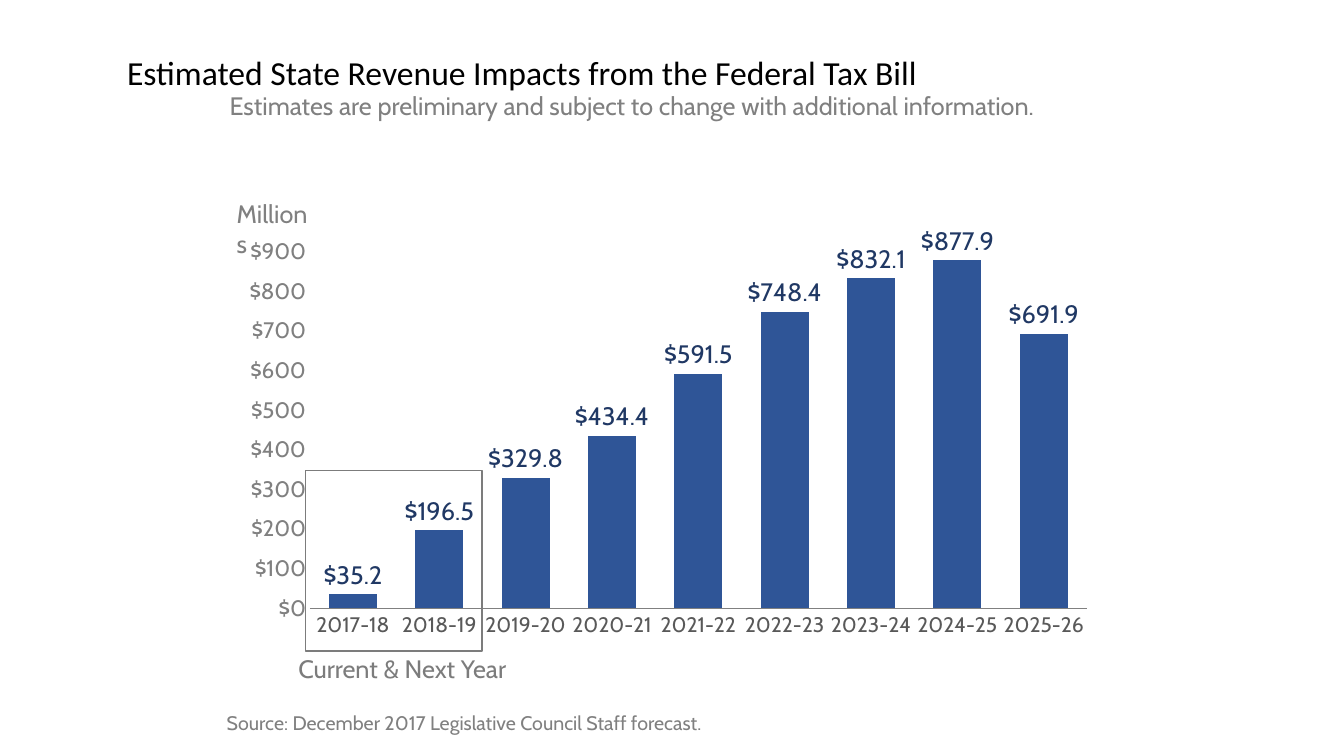
import pptx
import pptx.chart.data
import pptx.dml.color
import pptx.enum.chart
import pptx.enum.shapes
import pptx.enum.text
import pptx.oxml
import pptx.oxml.ns
import pptx.util
from dataclasses import dataclass

Inches = pptx.util.Inches
Align = pptx.enum.text.PP_ALIGN

# Content
TITLE = "Estimated State Revenue Impacts from the Federal Tax Bill"
SUBTITLE = "Estimates are preliminary and subject to change with additional information."
SOURCE = "Source: December 2017 Legislative Council Staff forecast."
UNIT = "Millions"
HIGHLIGHT = "Current & Next Year"
REVENUE = {
    "2017-18": 35.2, "2018-19": 196.5, "2019-20": 329.8,
    "2020-21": 434.4, "2021-22": 591.5, "2022-23": 748.4,
    "2023-24": 832.1, "2024-25": 877.9, "2025-26": 691.9,
}
PLOT_AREA = {"x": 0.094, "y": 0.164, "w": 0.881, "h": 0.758}


@dataclass(frozen=True)
class Theme:
    title_font: str = "Calibri"
    body_font: str = "Cabin"
    black: str = "000000"
    gray: str = "808080"
    frame: str = "7C7C7C"
    category: str = "595959"
    bar: str = "2F5597"
    value: str = "203864"
    title_size: int = 24
    text_size: int = 18
    axis_size: int = 16
    category_size: int = 15
    source_size: int = 14


THEME = Theme()


def color(code):
    return pptx.dml.color.RGBColor.from_string(code)


def style_font(font, size, code, name=THEME.body_font):
    font.name = name
    font.size = pptx.util.Pt(size)
    font.bold = False
    font.color.rgb = color(code)


def place(shape, left, top, width, height):
    shape.left, shape.top = Inches(left), Inches(top)
    shape.width, shape.height = Inches(width), Inches(height)


def add_text(page, text, area, size=THEME.text_size, code=THEME.gray, align=Align.LEFT):
    box = page.shapes.add_textbox(*map(Inches, area))
    box.text_frame.word_wrap = True
    para = box.text_frame.paragraphs[0]
    para.alignment = align
    span = para.add_run()
    span.text = text
    style_font(span.font, size, code)


def add_title(page):
    title = page.shapes.title
    place(title, 1.16, 0.02, 11.5, 1.45)
    title.text_frame.vertical_anchor = pptx.enum.text.MSO_ANCHOR.MIDDLE
    para = title.text_frame.paragraphs[0]
    para.alignment = Align.LEFT
    para.line_spacing = 0.9
    span = para.add_run()
    span.text = TITLE
    style_font(span.font, THEME.title_size, THEME.black, THEME.title_font)


def set_plot_area(chart):
    plot_area = chart.plots[0]._element.getparent()
    for old in plot_area.findall(pptx.oxml.ns.qn("c:layout")):
        plot_area.remove(old)
    modes = '<c:layoutTarget val="inner"/><c:xMode val="edge"/><c:yMode val="edge"/>'
    sizes = "".join(f'<c:{key} val="{value}"/>' for key, value in PLOT_AREA.items())
    plot_area.insert(0, pptx.oxml.parse_xml(
        f'<c:layout {pptx.oxml.ns.nsdecls("c")}>'
        f"<c:manualLayout>{modes}{sizes}</c:manualLayout></c:layout>"))


def add_revenue_chart(page):
    data = pptx.chart.data.CategoryChartData()
    data.categories = list(REVENUE)
    data.add_series("Series 1", list(REVENUE.values()))
    kind = pptx.enum.chart.XL_CHART_TYPE.COLUMN_CLUSTERED
    chart = page.shapes.add_chart(
        kind, Inches(2.25), Inches(1.73), Inches(8.75), Inches(4.67), data).chart
    chart.has_legend = False
    chart.has_title = False
    style_font(chart.font, THEME.axis_size, THEME.black)
    set_plot_area(chart)

    # Axes
    for axis, size, code in (
        (chart.category_axis, THEME.category_size, THEME.category),
        (chart.value_axis, THEME.axis_size, THEME.gray),
    ):
        axis.has_major_gridlines = False
        axis.major_tick_mark = pptx.enum.chart.XL_TICK_MARK.NONE
        axis.minor_tick_mark = pptx.enum.chart.XL_TICK_MARK.NONE
        style_font(axis.tick_labels.font, size, code)
    base_line = chart.category_axis.format.line
    base_line.color.rgb = color(THEME.gray)
    base_line.width = pptx.util.Pt(0.75)
    values = chart.value_axis
    values.minimum_scale, values.maximum_scale, values.major_unit = 0, 900, 100
    values.format.line.fill.background()
    values.tick_labels.number_format = '"$"#,##0'
    values.tick_labels.number_format_is_linked = False

    # Bars and their labels
    plot = chart.plots[0]
    plot.gap_width = 80
    plot.vary_by_categories = False
    bars = plot.series[0]
    bars.format.fill.solid()
    bars.format.fill.fore_color.rgb = color(THEME.bar)
    labels = bars.data_labels
    labels.show_value = True
    labels.number_format = '"$"#,##0.0'
    labels.number_format_is_linked = False
    labels.position = pptx.enum.chart.XL_LABEL_POSITION.OUTSIDE_END
    style_font(labels.font, THEME.text_size, THEME.value)


def add_highlight(page):
    frame = page.shapes.add_shape(
        pptx.enum.shapes.MSO_SHAPE.RECTANGLE,
        Inches(3.03), Inches(4.67), Inches(1.75), Inches(1.79))
    frame.shadow.inherit = False
    frame.fill.background()
    frame.line.color.rgb = color(THEME.frame)
    frame.line.width = pptx.util.Pt(1)
    add_text(page, HIGHLIGHT, (2.75, 6.43, 2.48, 0.4),
             code=THEME.frame, align=Align.CENTER)


def main():
    deck = pptx.Presentation()
    deck.slide_width, deck.slide_height = Inches(13.33), Inches(7.5)
    page = deck.slides.add_slide(deck.slide_layouts.get_by_name("Title Only"))
    add_title(page)
    add_text(page, SOURCE, (2.15, 7, 7.76, 0.32), size=THEME.source_size)
    add_text(page, UNIT, (2.25, 1.92, 0.94, 0.4))
    add_revenue_chart(page)
    add_highlight(page)
    add_text(page, SUBTITLE, (2.18, 0.85, 9.26, 0.4))
    deck.save("out.pptx")


if __name__ == "__main__":
    main()
